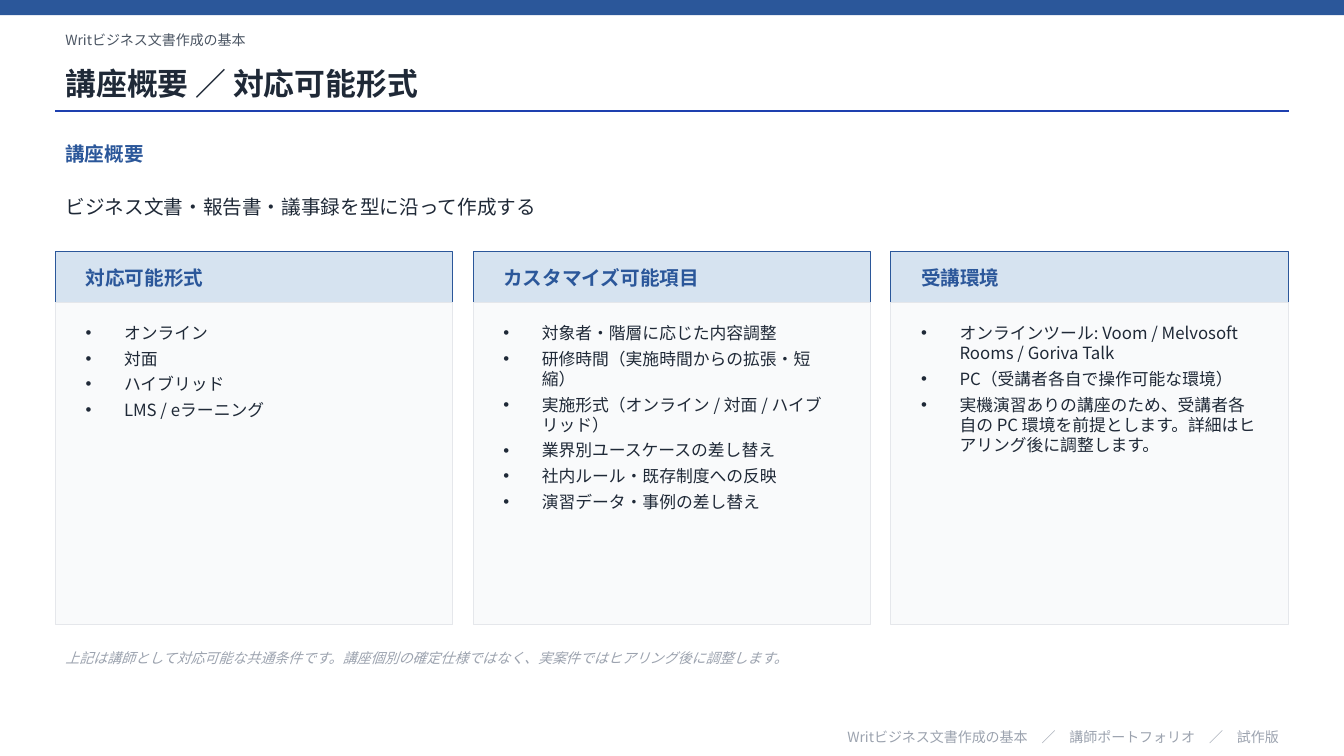
from lxml.etree import SubElement as Sub
from pptx import Presentation
from pptx.dml.color import RGBColor
from pptx.enum.shapes import MSO_CONNECTOR as Link, MSO_SHAPE as Shape
from pptx.enum.text import MSO_ANCHOR as Anchor, MSO_AUTO_SIZE as Auto, PP_ALIGN as Align
from pptx.oxml.ns import qn
from pptx.util import Inches, Pt

WIDE, HIGH = 13.33, 7.5
EDGE, GAP, ROW = 0.55, 0.2, 0.05    # side margin, column gap, row height
COLS = 3
COL = (WIDE - 2 * EDGE - (COLS - 1) * GAP) / COLS

BLUE, PALE, RULE = "2B579A", "D6E3F0", "1E40AF"
INK, GREY, FAINT = "1F2937", "4B5563", "9CA3AF"
CARD, RIM = "F9FAFB", "E5E7EB"


def tint(code):
    return RGBColor.from_string(code)


class Deck:
    font = "Noto Sans CJK JP"

    def __init__(self):
        self.prs = Presentation()
        self.prs.slide_width, self.prs.slide_height = Inches(WIDE), Inches(HIGH)
        self.slide = self.prs.slides.add_slide(self.prs.slide_layouts[4])
        self.items = self.slide.shapes

    def area(self, col, span, row, rows, pad=0):
        """Columns and rows to left, top, width, height."""
        left = EDGE + col * (COL + GAP) + pad
        width = span * COL + (span - 1) * GAP - 2 * pad
        return [Inches(n) for n in (left, row * ROW, width, rows * ROW)]

    def block(self, spot, fill, line=None):
        rect = self.items.add_shape(Shape.RECTANGLE, *spot)
        rect.shadow.inherit = False
        rect.fill.solid()
        rect.fill.fore_color.rgb = tint(fill)
        if line:
            rect.line.color.rgb = tint(line)
            rect.line.width = Pt(0.75)
        else:
            rect.line.fill.background()

    def rule(self, row):
        x, y, w, _ = self.area(0, COLS, row, 0)
        line = self.items.add_connector(Link.STRAIGHT, x, y, x + w, y)
        line.line.color.rgb = tint(RULE)
        line.line.width = Pt(1)
        Sub(line._element.spPr, qn("a:effectLst"))

    def holder(self, idx, spot):
        """Place a template placeholder on top of what is drawn so far."""
        box = self.slide.placeholders[idx]
        box.left, box.top, box.width, box.height = spot
        self.items._spTree.append(box._element)
        return box

    def label(self, spot):
        return self.items.add_textbox(*spot)

    def words(self, box, lines, size, color, bold=False, italic=False,
              align=Align.LEFT, anchor=Anchor.MIDDLE, dots=False):
        frame = box.text_frame
        frame.word_wrap = True
        frame.auto_size = Auto.NONE
        frame.vertical_anchor = anchor
        for n, text in enumerate(lines):
            para = frame.add_paragraph() if n else frame.paragraphs[0]
            props = para._p.get_or_add_pPr()
            dent = Inches(0.38) if dots else 0
            props.set("marL", str(dent))
            props.set("indent", str(-dent))
            if dots:
                Sub(props, qn("a:buFont"), typeface="Arial")
                Sub(props, qn("a:buChar"), char="•")
            else:
                Sub(props, qn("a:buNone"))
            para.alignment = align
            para.space_before = Pt(0)
            para.space_after = Pt(4 if dots else 0)
            run = para.add_run()
            run.text = text
            font = run.font
            font.name, font.size = self.font, Pt(size)
            font.bold, font.italic = bold, italic
            font.color.rgb = tint(color)
            Sub(run._r.get_or_add_rPr(), qn("a:ea"), typeface=self.font)

    def card(self, col, idx, head, lines):
        self.block(self.area(col, 1, 50, 10), PALE, BLUE)
        self.words(self.label(self.area(col, 1, 50, 10, GAP)), [head], 14, BLUE, bold=True)
        self.block(self.area(col, 1, 60, 64), CARD, RIM)
        self.words(self.holder(idx, self.area(col, 1, 63, 57, GAP)), lines, 12, INK,
                   anchor=Anchor.TOP, dots=True)


COURSE = "Writビジネス文書作成の基本"
CARDS = [
    (2, "対応可能形式", ["オンライン", "対面", "ハイブリッド", "LMS / eラーニング"]),
    (3, "カスタマイズ可能項目", [
        "対象者・階層に応じた内容調整",
        "研修時間（実施時間からの拡張・短縮）",
        "実施形式（オンライン / 対面 / ハイブリッド）",
        "業界別ユースケースの差し替え",
        "社内ルール・既存制度への反映",
        "演習データ・事例の差し替え"]),
    (4, "受講環境", [
        "オンラインツール: Voom / Melvosoft Rooms / Goriva Talk",
        "PC（受講者各自で操作可能な環境）",
        "実機演習ありの講座のため、受講者各自の PC 環境を前提とします。"
        "詳細はヒアリング後に調整します。"]),
]


def main():
    deck = Deck()

    def full(row, rows):
        return deck.area(0, COLS, row, rows)

    # Top bar and heading
    deck.block(deck.area(0, COLS, 0, 3, -EDGE), BLUE)
    deck.words(deck.label(full(5, 6)), [COURSE], 10, GREY)
    deck.words(deck.holder(0, full(11, 11)), ["講座概要 ／ 対応可能形式"], 22, INK, bold=True)
    deck.rule(22)

    # Summary
    deck.words(deck.label(full(27, 7)), ["講座概要"], 14, BLUE, bold=True)
    deck.words(deck.holder(1, full(35, 12)),
               ["ビジネス文書・報告書・議事録を型に沿って作成する"], 14, INK)

    # Cards
    for col, (idx, head, lines) in enumerate(CARDS):
        deck.card(col, idx, head, lines)

    # Note and footer
    deck.words(deck.label(full(127, 7)),
               ["上記は講師として対応可能な共通条件です。講座個別の確定仕様ではなく、"
                "実案件ではヒアリング後に調整します。"], 10, FAINT, italic=True)
    deck.words(deck.label(full(144, 4.4)),
               [COURSE + "　／　講師ポートフォリオ　／　試作版"], 10, FAINT, align=Align.RIGHT)

    deck.prs.save("out.pptx")


if __name__ == "__main__":
    main()
